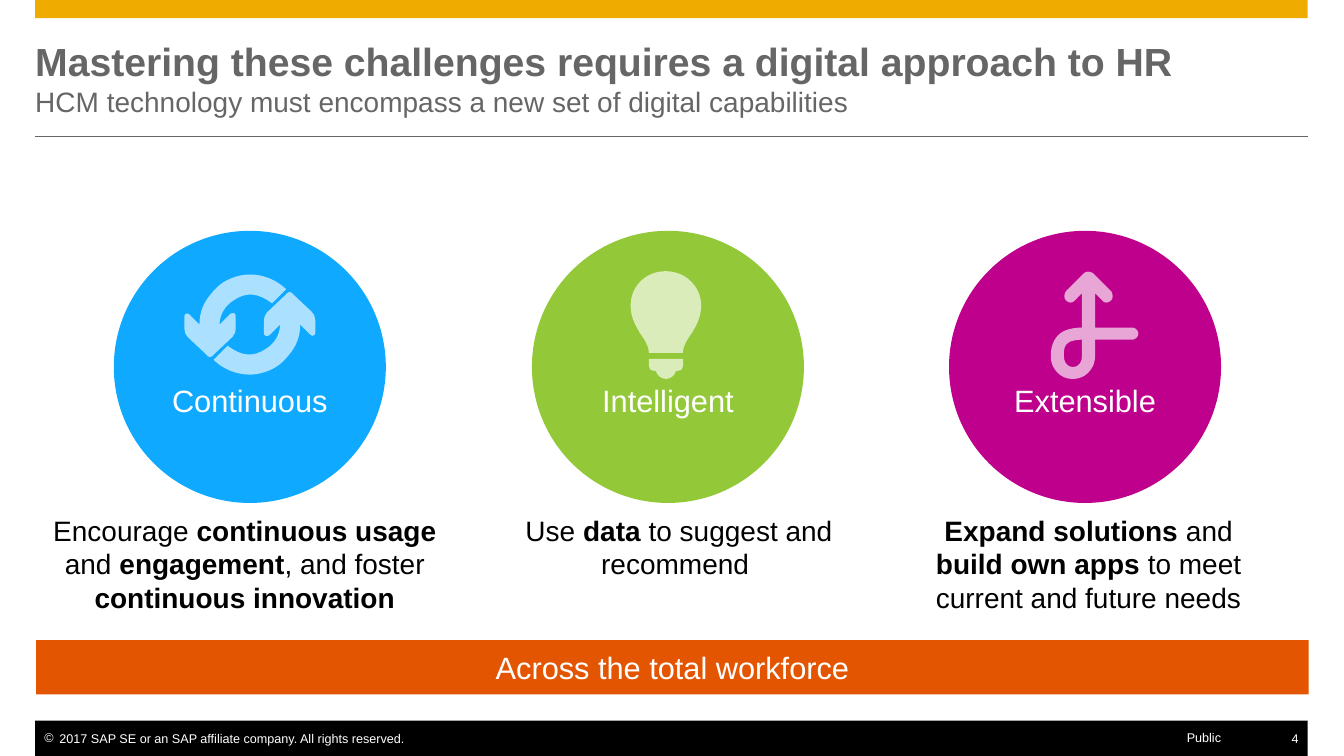
from lxml import etree
from pptx import Presentation
from pptx.dml.color import RGBColor
from pptx.enum import shapes, text
from pptx.oxml import ns
from pptx.util import Inches, Pt

WHITE = RGBColor(0xFF, 0xFF, 0xFF)
BLACK = RGBColor(0x00, 0x00, 0x00)
GRAY = RGBColor(0x66, 0x66, 0x66)
GOLD = RGBColor(0xF0, 0xAB, 0x00)
ORANGE = RGBColor(0xE3, 0x55, 0x00)
BLUE = RGBColor(0x0F, 0xAA, 0xFF)
GREEN = RGBColor(0x93, 0xC9, 0x39)
MAGENTA = RGBColor(0xBE, 0x00, 0x8C)

LEFT, WIDTH = 0.35, 12.63
CIRCLE_TOP, CIRCLE_SIZE = 2.29, 2.7
CAPTION_TOP = 5.09
CYCLE_CENTER = (2.48, 3.22)

CYCLE_ARROW = [
    (1.98, 3.22), (1.98, 3.1, 2.02, 3, 2.1, 2.91),
    (2.17, 2.82, 2.25, 2.77, 2.36, 2.74), (2.54, 2.69, 2.73, 2.76, 2.84, 2.87),
    (2.7, 3.01), (2.57, 2.91, 2.45, 2.89, 2.32, 2.98),
    (2.22, 3.04, 2.18, 3.14, 2.18, 3.22), (2.29, 3.11),
    (2.31, 3.1, 2.34, 3.1, 2.34, 3.14), (2.34, 3.24),
    (2.34, 3.29, 2.33, 3.32, 2.31, 3.34), (2.12, 3.52),
    (2.1, 3.55, 2.07, 3.55, 2.05, 3.52), (1.87, 3.35),
    (1.84, 3.32, 1.83, 3.29, 1.83, 3.26), (1.83, 3.14),
    (1.83, 3.11, 1.86, 3.1, 1.88, 3.12), (1.97, 3.21),
]
BULB = [
    (6.96, 3.03), (6.96, 2.84, 6.8, 2.69, 6.61, 2.69),
    (6.41, 2.69, 6.26, 2.84, 6.26, 3.03), (6.26, 3.15, 6.31, 3.23, 6.35, 3.3),
    (6.39, 3.36, 6.44, 3.42, 6.44, 3.5), (6.78, 3.5),
    (6.78, 3.42, 6.83, 3.36, 6.87, 3.3), (6.91, 3.23, 6.96, 3.15, 6.96, 3.03),
]
BULB_BASE = [
    (6.44, 3.56), (6.44, 3.63), (6.44, 3.66, 6.46, 3.68, 6.49, 3.68),
    (6.51, 3.68), (6.52, 3.72, 6.56, 3.76, 6.61, 3.76),
    (6.66, 3.76, 6.7, 3.72, 6.71, 3.68), (6.73, 3.68),
    (6.76, 3.68, 6.78, 3.66, 6.78, 3.63), (6.78, 3.56),
]
LOOP_ARROW = [
    (11.24, 3.25), (10.87, 3.25), (10.87, 2.91), (10.94, 2.98),
    (10.96, 3.01, 11, 3.01, 11.03, 2.98), (11.05, 2.96, 11.05, 2.92, 11.03, 2.89),
    (10.85, 2.71), (10.82, 2.69, 10.78, 2.69, 10.76, 2.71), (10.58, 2.89),
    (10.56, 2.92, 10.56, 2.96, 10.58, 2.98), (10.61, 3.01, 10.65, 3.01, 10.67, 2.98),
    (10.74, 2.91), (10.74, 3.25), (10.68, 3.25, 10.62, 3.26, 10.57, 3.28),
    (10.48, 3.32, 10.43, 3.41, 10.43, 3.53), (10.43, 3.62, 10.47, 3.67, 10.5, 3.7),
    (10.54, 3.74, 10.59, 3.76, 10.65, 3.76), (10.7, 3.76, 10.76, 3.74, 10.8, 3.7),
    (10.83, 3.67, 10.87, 3.62, 10.87, 3.53), (10.87, 3.37), (11.24, 3.37),
    (11.27, 3.37, 11.3, 3.34, 11.3, 3.31), (11.3, 3.28, 11.27, 3.25, 11.24, 3.25),
]
LOOP_HOLE = [
    (10.74, 3.53), (10.74, 3.58, 10.72, 3.64, 10.65, 3.64),
    (10.58, 3.64, 10.56, 3.58, 10.56, 3.53), (10.56, 3.47, 10.56, 3.42, 10.62, 3.39),
    (10.65, 3.38, 10.69, 3.37, 10.74, 3.37),
]


def paint(shape, color):
    shape.shadow.inherit = False
    shape.fill.solid()
    shape.fill.fore_color.rgb = color
    shape.line.fill.background()


def add_run(paragraph, words, size, color, bold=False):
    run = paragraph.add_run()
    run.text = words
    run.font.name = "Arial"
    run.font.size = Pt(size)
    run.font.bold = bold
    run.font.color.rgb = color


def set_frame(shape, margins=(0, 0, 0, 0), wrap=True, anchor=text.MSO_ANCHOR.TOP,
              align=text.PP_ALIGN.LEFT):
    frame = shape.text_frame
    frame.margin_left, frame.margin_top, frame.margin_right, frame.margin_bottom = map(
        Inches, margins)
    frame.word_wrap = wrap
    frame.vertical_anchor = anchor
    paragraph = frame.paragraphs[0]
    paragraph.alignment = align
    return paragraph


def add_shape(slide, kind, box, color):
    shape = slide.shapes.add_shape(kind, *map(Inches, box))
    paint(shape, color)
    return shape


def add_text(slide, box, **frame_options):
    shape = slide.shapes.add_textbox(*map(Inches, box))
    return set_frame(shape, **frame_options)


def add_rule(slide, top):
    rule = slide.shapes.add_connector(
        shapes.MSO_CONNECTOR.STRAIGHT, Inches(LEFT), Inches(top),
        Inches(LEFT + WIDTH), Inches(top))
    rule.line.color.rgb = GRAY
    rule.line.width = Pt(0.5)
    etree.SubElement(rule._element.spPr, ns.qn("a:effectLst"))


def set_bullet(paragraph, character, indent):
    properties = paragraph._p.get_or_add_pPr()
    properties.set("marL", str(Inches(indent)))
    properties.set("indent", str(-Inches(indent)))
    color = etree.SubElement(properties, ns.qn("a:buClr"))
    etree.SubElement(color, ns.qn("a:srgbClr"), val=str(WHITE))
    etree.SubElement(properties, ns.qn("a:buFont"), typeface="Arial")
    etree.SubElement(properties, ns.qn("a:buChar"), char=character)


def segment_points(segment):
    return [(Inches(x), Inches(y)) for x, y in zip(segment[::2], segment[1::2])]


def half_turn(outline, center):
    return [tuple(2 * center[i % 2] - value for i, value in enumerate(segment))
            for segment in outline]


def bend_curves(icon, segments):
    lines = iter(list(icon._element.iter(ns.qn("a:lnTo"))))
    for segment in segments:
        corners = [next(lines) for _ in segment[::2]]
        if len(corners) == 3:
            curve = etree.Element(ns.qn("a:cubicBezTo"))
            corners[0].addprevious(curve)
            for corner in corners:
                curve.append(corner[0])
                corner.getparent().remove(corner)


def add_icon(slide, *outlines):
    builder = slide.shapes.build_freeform(*segment_points(outlines[0][0])[0])
    for index, outline in enumerate(outlines):
        if index:
            builder.move_to(*segment_points(outline[0])[0])
        builder.add_line_segments(
            [point for segment in outline[1:] for point in segment_points(segment)])
    icon = builder.convert_to_shape()
    # the builder closes each contour without an extra line
    bend_curves(icon, [segment for outline in outlines for segment in outline[1:]])
    paint(icon, WHITE)
    color = icon._element.spPr.find(ns.qn("a:solidFill"))[0]
    etree.SubElement(color, ns.qn("a:alpha"), val="65000")


def add_capability(slide, left, color, label, icons, caption_box, caption):
    circle = add_shape(slide, shapes.MSO_SHAPE.OVAL,
                       (left, CIRCLE_TOP, CIRCLE_SIZE, CIRCLE_SIZE), color)
    paragraph = set_frame(circle, margins=(0, 1.1, 0, 0.06), wrap=False,
                          align=text.PP_ALIGN.CENTER)
    add_run(paragraph, label, 22, WHITE)
    for outlines in icons:
        add_icon(slide, *outlines)
    paragraph = add_text(slide, caption_box, align=text.PP_ALIGN.CENTER)
    for words, bold in caption:
        add_run(paragraph, words, 20, BLACK, bold)


def add_header(slide):
    add_shape(slide, shapes.MSO_SHAPE.RECTANGLE, (LEFT, 0, WIDTH, 0.18), GOLD)
    add_rule(slide, 1.35)
    title = add_text(slide, (LEFT, 0.36, WIDTH, 0.83), anchor=text.MSO_ANCHOR.MIDDLE)
    add_run(title, "Mastering these challenges requires a digital approach to HR", 28, GRAY, True)
    title.add_line_break()
    add_run(title, "HCM technology must encompass a new set of digital capabilities", 20, GRAY)


def add_footer(slide):
    add_shape(slide, shapes.MSO_SHAPE.RECTANGLE, (LEFT, 7.15, WIDTH, 0.35), BLACK)
    notice = add_text(slide, (LEFT, 7.25, 3.72, 0.15), margins=(0.09, 0, 0, 0), wrap=False)
    set_bullet(notice, "©", 0.15)
    add_run(notice, "2017 SAP SE or an SAP affiliate company. All rights reserved.", 9, WHITE)
    number = add_text(slide, (12.73, 7.25, 0.25, 0.15), margins=(0, 0, 0.09, 0),
                      wrap=False, align=text.PP_ALIGN.RIGHT)
    add_run(number, "4", 9, WHITE)
    add_run(add_text(slide, (11.78, 7.24, 0.34, 0.15), wrap=False), "Public", 9, WHITE)


def main():
    presentation = Presentation()
    presentation.slide_width = Inches(13.34)
    presentation.slide_height = Inches(7.5)
    slide = presentation.slides.add_slide(presentation.slide_layouts[6])
    add_header(slide)
    add_capability(
        slide, 1.13, BLUE, "Continuous",
        [[CYCLE_ARROW], [half_turn(CYCLE_ARROW, CYCLE_CENTER)]], (0.42, CAPTION_TOP, 4.02, 1.01),
        [("Encourage ", False), ("continuous usage ", True), ("and ", False),
         ("engagement", True), (", and foster ", False), ("continuous innovation", True)])
    add_capability(
        slide, 5.28, GREEN, "Intelligent", [[BULB], [BULB_BASE]], (4.64, CAPTION_TOP, 4.2, 0.67),
        [("Use ", False), ("data", True), (" to suggest and recommend ", False)])
    add_capability(
        slide, 9.42, MAGENTA, "Extensible", [[LOOP_ARROW, LOOP_HOLE]], (9.05, CAPTION_TOP, 3.51, 1.01),
        [("Expand solutions ", True), ("and ", False), ("build own apps ", True),
         ("to meet current and future needs", False)])
    banner = add_shape(slide, shapes.MSO_SHAPE.RECTANGLE, (0.36, 6.35, WIDTH, 0.54), ORANGE)
    paragraph = set_frame(banner, margins=(0.1, 0.08, 0.1, 0.08),
                          anchor=text.MSO_ANCHOR.MIDDLE, align=text.PP_ALIGN.CENTER)
    add_run(paragraph, "Across the total workforce", 22, WHITE)
    add_footer(slide)
    presentation.save("out.pptx")


if __name__ == "__main__":
    main()
